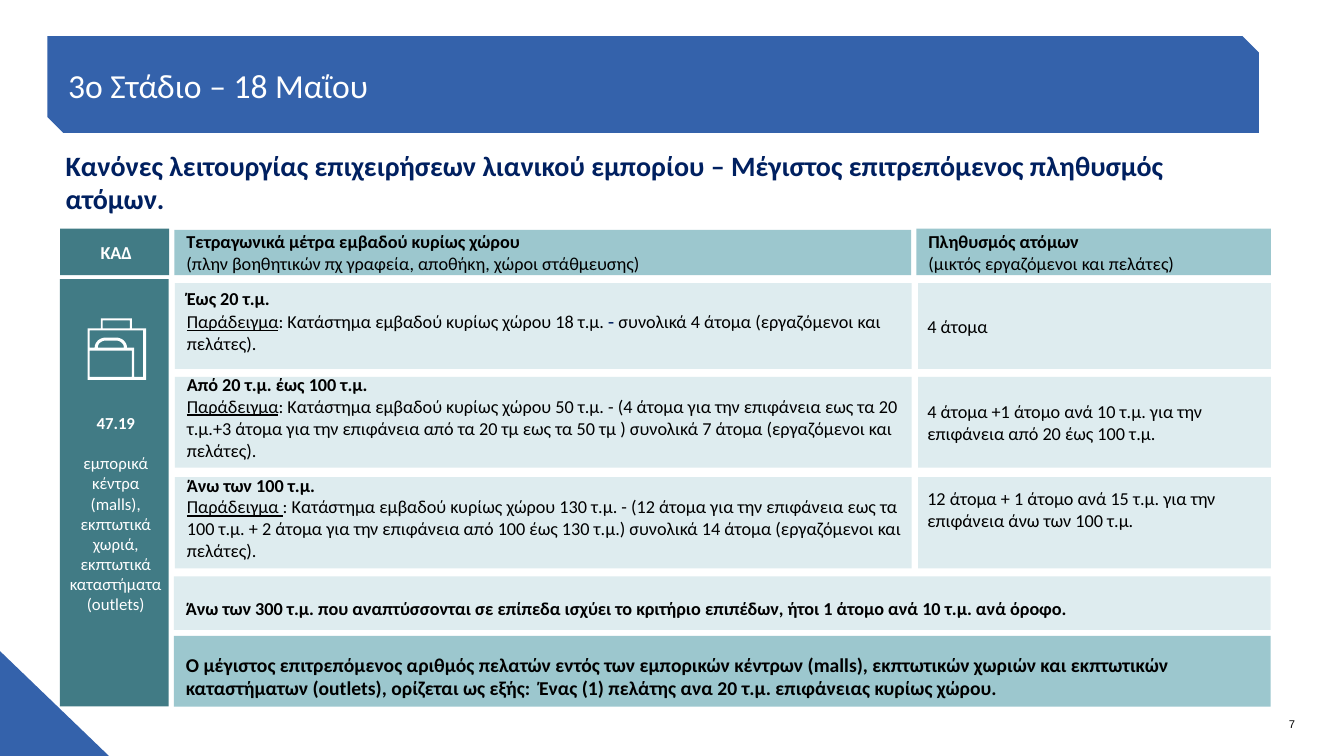
from math import cos, pi, sin

from lxml import etree
from pptx import Presentation
from pptx.dml.color import RGBColor
from pptx.enum import shapes, text
from pptx.oxml import ns
from pptx.util import Pt

BLUE = RGBColor(0x34, 0x62, 0xAB)
NAVY = RGBColor(0x00, 0x20, 0x60)
TEAL = RGBColor(0x41, 0x7B, 0x85)
AQUA = RGBColor(0x9C, 0xC7, 0xCE)
PALE = RGBColor(0xDE, 0xEC, 0xEF)
WHITE = RGBColor(0xFF, 0xFF, 0xFF)
BLACK = RGBColor(0, 0, 0)

LEFT, CENTER, RIGHT = text.PP_ALIGN.LEFT, text.PP_ALIGN.CENTER, text.PP_ALIGN.RIGHT
TOP, MIDDLE, BOTTOM = text.MSO_ANCHOR.TOP, text.MSO_ANCHOR.MIDDLE, text.MSO_ANCHOR.BOTTOM
BOLD = {"bold": True}
UNDERLINED = {"underline": True}

RULES = [
    (202.3, 61.2, 0, "Έως 20 τ.μ.", "Παράδειγμα",
     [(": Κατάστημα εμβαδού κυρίως χώρου 18 τ.μ. ", {}),
      ("-", {"size": 14, "font": "Arial", "color": NAVY}),
      (" συνολικά 4 άτομα (εργαζόμενοι και πελάτες).", {})],
     "4 άτομα"),
    (269.3, 64.8, 0, "Από 20 τ.μ. έως 100 τ.μ.", "Παράδειγμα",
     [(": Κατάστημα εμβαδού κυρίως χώρου 50 τ.μ. - (4 άτομα για την επιφάνεια εως τα 20 τ.μ."
       "+3 άτομα για την επιφάνεια από τα 20 τμ εως τα 50 τμ ) συνολικά 7 άτομα "
       "(εργαζόμενοι και πελάτες).", {})],
     "4 άτομα +1 άτομο ανά 10 τ.μ. για την επιφάνεια από 20 έως 100 τ.μ."),
    (340.9, 65.2, 20, "Άνω των 100 τ.μ.", "Παράδειγμα ",
     [(": Κατάστημα εμβαδού κυρίως χώρου 130 τ.μ. - (12 άτομα για την επιφάνεια εως τα "
       "100 τ.μ. + 2 άτομα για την επιφάνεια από 100 έως 130 τ.μ.) συνολικά 14 άτομα "
       "(εργαζόμενοι και πελάτες).", {})],
     "12 άτομα + 1 άτομο ανά 15 τ.μ. για την επιφάνεια άνω των 100 τ.μ."),
]


def add_run(paragraph, wording, size=13, color=BLACK, bold=False, underline=False, font="Calibri"):
    """Append formatted text to a paragraph."""
    run = paragraph.add_run()
    run.text = wording
    run.font.size = Pt(size)
    run.font.color.rgb = color
    run.font.bold = bold
    run.font.underline = underline
    run.font.name = font


def write(frame, paragraphs, insets=(8.6, 0, 5.8, 0), align=LEFT, anchor=MIDDLE, gap=0):
    """Fill a text frame with paragraphs, each a list of (wording, format) pairs."""
    frame.word_wrap = True
    frame.auto_size = text.MSO_AUTO_SIZE.NONE
    frame.vertical_anchor = anchor
    frame.margin_left, frame.margin_top, frame.margin_right, frame.margin_bottom = map(Pt, insets)
    for index, pieces in enumerate(paragraphs):
        paragraph = frame.add_paragraph() if index else frame.paragraphs[0]
        paragraph.alignment = align
        paragraph.space_before = Pt(gap if index else 0)
        for wording, style in pieces:
            add_run(paragraph, wording, **style)


def place(item, left, top, width, height):
    """Move and size a shape, in points."""
    item.left, item.top, item.width, item.height = map(Pt, (left, top, width, height))


def paint(shape, color):
    """Give a shape a plain fill without line or shadow."""
    shape.shadow.inherit = False
    shape.fill.solid()
    shape.fill.fore_color.rgb = color
    shape.line.fill.background()


def add_block(slide, bounds, color, kind=shapes.MSO_SHAPE.RECTANGLE):
    """Add a flat coloured shape."""
    block = slide.shapes.add_shape(kind, *map(Pt, bounds))
    paint(block, color)
    return block


def add_cell(slide, bounds, color, paragraphs, **layout):
    """Add a coloured rectangle holding text."""
    write(add_block(slide, bounds, color).text_frame, paragraphs, **layout)


def remove_bullet(paragraph):
    """Clear the bullet and indent inherited from the template."""
    properties = paragraph._p.get_or_add_pPr()
    properties.set("marL", "0")
    properties.set("indent", "0")
    etree.SubElement(properties, ns.qn("a:buNone"))


def arc(center_x, center_y, radius_x, radius_y, start, end, steps=8):
    """Return points along an elliptical arc between two angles."""
    angles = [start + (end - start) * step / steps for step in range(steps + 1)]
    return [(center_x + radius_x * cos(a), center_y - radius_y * sin(a)) for a in angles]


def add_bag_icon(slide):
    """Draw the shopping bag from its outline and openings."""
    outline = [(131, 326), (131, 316), (100, 316), (100, 326),
               (87, 326), (87, 377), (145, 377), (145, 326)]
    handle = [(102, 318), (129, 318), (129, 326), (102, 326)]
    pocket = [(89, 374), (89, 348), (131, 348), (131, 374)]
    flap = arc(105, 345, 8, 7, pi, pi / 2) + arc(115, 345, 8, 7, pi / 2, 0)
    body = [(142, 374), (133, 374), (133, 345), *arc(115, 345, 11, 10, 0, pi / 2),
            *arc(105, 345, 11, 10, pi / 2, pi), (89, 345), (89, 328), (142, 328)]
    contours = [[(x * 10, y * 10) for x, y in c] for c in (outline, handle, pocket, flap, body)]
    builder = slide.shapes.build_freeform(*contours[0][0], scale=Pt(0.072))
    builder.add_line_segments(contours[0][1:], close=True)
    for contour in contours[1:]:
        builder.move_to(*contour[0])
        builder.add_line_segments(contour[1:], close=True)
    paint(builder.convert_to_shape(), WHITE)


def add_heading(slide):
    """Set the title on its band and the subtitle below it."""
    band_bounds = (33.8, 25.9, 865.4, 69.1)
    band = add_block(slide, band_bounds, BLUE, shapes.MSO_SHAPE.SNIP_2_DIAG_RECTANGLE)
    title, subtitle = slide.shapes.title, slide.placeholders[1]
    band.element.addnext(title.element)
    place(title, *band_bounds)
    write(title.text_frame, [[("3o Στάδιο – 18 Μαΐου", {"size": 24, "color": WHITE})]],
          insets=(14.8, 1.4, 8.6, 1.4))
    place(subtitle, 39.6, 102.2, 844.6, 55.4)
    remove_bullet(subtitle.text_frame.paragraphs[0])
    write(subtitle.text_frame,
          [[("Κανόνες λειτουργίας επιχειρήσεων λιανικού εμπορίου – Μέγιστος επιτρεπόμενος "
             "πληθυσμός ατόμων.", {"size": 20, "color": NAVY, "bold": True})]],
          insets=(7.2, 3.6, 7.2, 3.6), anchor=TOP)


def add_activity_column(slide):
    """Add the activity code column with its bag icon."""
    add_cell(slide, (43, 163.4, 77.8, 33.1), TEAL,
             [[("ΚΑΔ", {"color": WHITE, "bold": True})]], insets=(6.5, 4.3, 4.3, 4.3), align=CENTER)
    label = {"size": 12, "color": WHITE}
    add_cell(slide, (42.7, 199.4, 77.8, 305.3), TEAL,
             [[("47.19", {**label, **BOLD})],
              [("εμπορικά κέντρα (malls), εκπτωτικά χωριά, εκπτωτικά καταστήματα (outlets)", label)]],
             insets=(6.5, 29.4, 4.3, 0), align=CENTER, gap=14.6)
    add_bag_icon(slide)


def add_rules(slide):
    """Add the header cells, the area rules and the closing notes."""
    add_cell(slide, (124.6, 164.2, 526.3, 32.4), AQUA,
             [[("Τετραγωνικά μέτρα εμβαδού κυρίως χώρου", BOLD)],
              [("(πλην βοηθητικών πχ γραφεία, αποθήκη, χώροι στάθμευσης)", {})]])
    add_cell(slide, (654.5, 163.4, 253.4, 33.1), AQUA,
             [[("Πληθυσμός ατόμων", BOLD)], [("(μικτός εργαζόμενοι και πελάτες)", {})]])
    for top, height, lift, area, example, detail, population in RULES:
        add_cell(slide, (124.9, top, 526.3, height), PALE,
                 [[(area, BOLD)], [(example, UNDERLINED), *detail]], insets=(8.6, 0, 5.8, 7.6))
        add_cell(slide, (655.9, top, 252, height), PALE, [[(population, {})]],
                 insets=(6.5, 0, 4.3, lift))
    note_insets = (8.6, 11.5, 5.8, 4.3)
    add_cell(slide, (124.2, 411.8, 783.4, 38.2), PALE,
             [[("Άνω των 300 τ.μ. που αναπτύσσονται σε επίπεδα ισχύει το κριτήριο επιπέδων, "
                "ήτοι 1 άτομο ανά 10 τ.μ. ανά όροφο.", BOLD)]], insets=note_insets)
    add_cell(slide, (124.2, 454.3, 783.4, 50.4), AQUA,
             [[("Ο μέγιστος επιτρεπόμενος αριθμός πελατών εντός των εμπορικών κέντρων (malls), "
                "εκπτωτικών χωριών και εκπτωτικών καταστήματων (outlets), ορίζεται ως εξής:  "
                "Ένας (1) πελάτης ανα 20 τ.μ. επιφάνειας κυρίως χώρου.",
                {"size": 14, "bold": True})]], insets=note_insets)


def main():
    """Build the slide and save it."""
    deck = Presentation()
    deck.slide_width, deck.slide_height = Pt(960), Pt(540)
    slide = deck.slides.add_slide(deck.slide_layouts[1])
    add_block(slide, (0, 465.1, 77.8, 74.9), BLUE, shapes.MSO_SHAPE.RIGHT_TRIANGLE)
    page_number = slide.shapes.add_textbox(*map(Pt, (786.2, 511.2, 139, 10.8)))
    write(page_number.text_frame, [[("7", {"size": 8, "font": "Arial"})]],
          insets=(0, 0, 0, 0), align=RIGHT, anchor=BOTTOM)
    add_heading(slide)
    add_activity_column(slide)
    add_rules(slide)
    deck.save("out.pptx")


if __name__ == "__main__":
    main()
